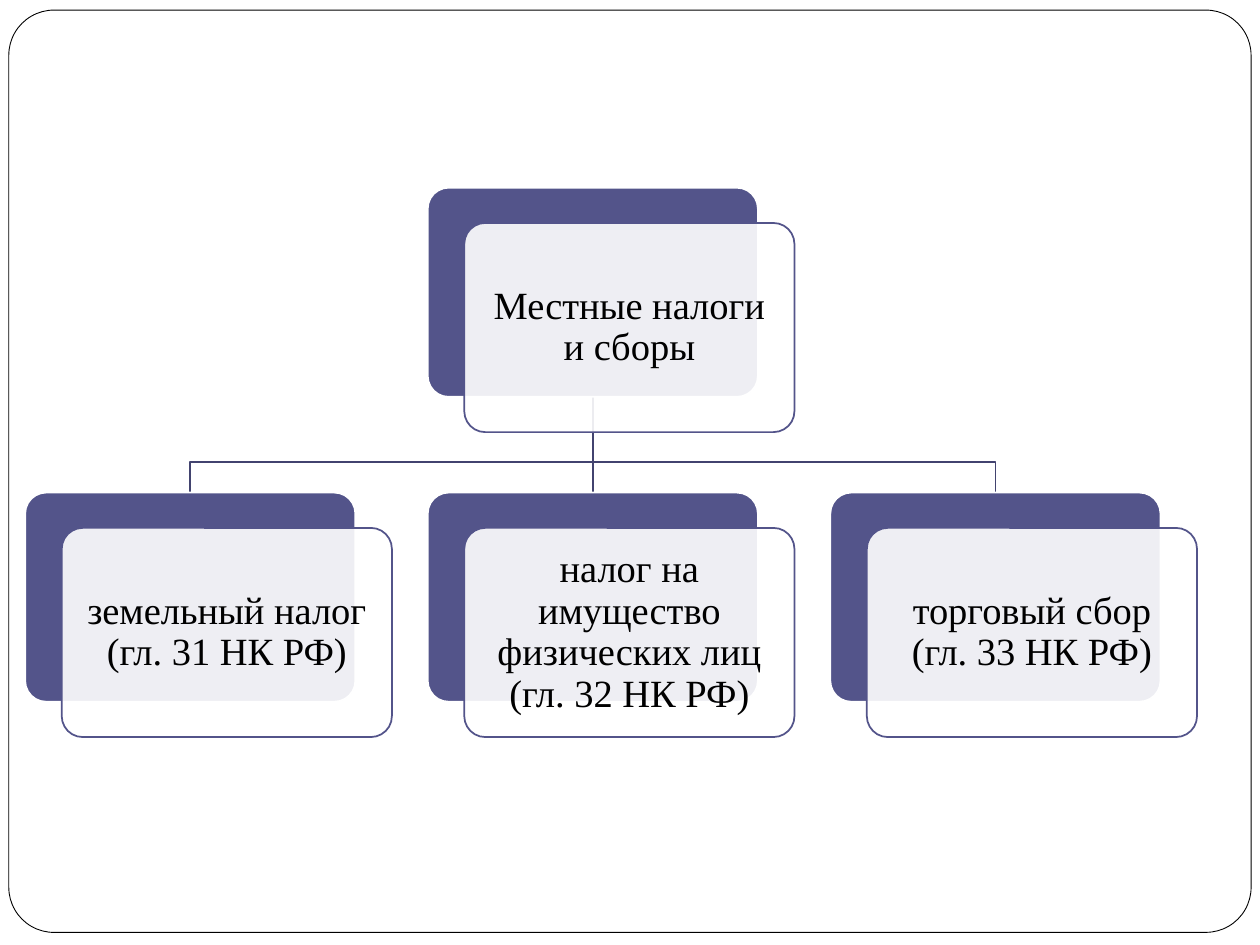
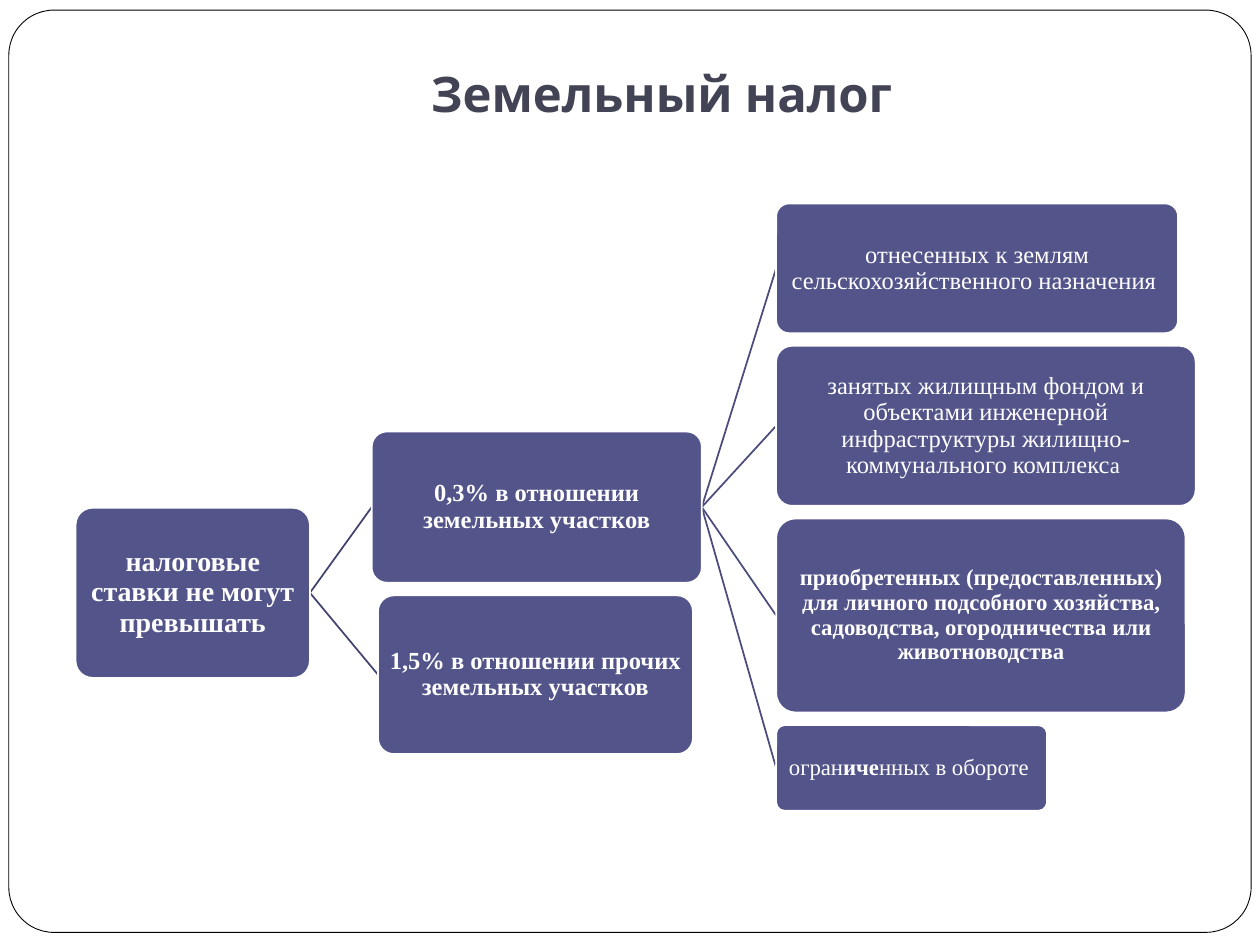
from dataclasses import dataclass

from lxml import etree
from pptx import Presentation
from pptx.dml.color import RGBColor
from pptx.enum import shapes, text
from pptx.oxml.ns import qn
from pptx.util import Inches, Pt

TITLE_ONLY, BLANK = 5, 6
TOP, LEFT, BOTTOM, RIGHT = range(4)


@dataclass(frozen=True)
class Theme:
    paper: str = "FFFFFF"
    ink: str = "000000"
    title: str = "424456"
    accent: str = "53548A"
    branch: str = "42436F"
    leaf_branch: str = "4B4C7D"
    title_font: str = "Karla"
    body_font: str = "Times New Roman"
    title_size: int = 28
    card_size: int = 22
    root_size: int = 16
    node_size: int = 14
    small_size: int = 13


class Deck:
    def __init__(self, theme):
        self.theme = theme
        self.prs = Presentation()
        self.prs.slide_width, self.prs.slide_height = Inches(10), Inches(7.5)
        self.slide = None

    def new_slide(self, layout):
        self.slide = self.prs.slides.add_slide(self.prs.slide_layouts[layout])

    def frame_master(self):
        """Move the rounded page frame from the current slide to the master."""
        frame = self.box(0.07, 0.08, 9.86, 7.32, self.theme.paper, self.theme.ink, 0.5, 0.049)
        self.prs.slide_master.shapes.element.insert(2, frame.element)

    def title(self, wording):
        holder = self.slide.shapes.title
        holder.left, holder.top = Inches(1), Inches(0.3)
        holder.width, holder.height = Inches(8.5), Inches(0.77)
        self.add_text(holder, [(wording, self.theme.title_size, True)], self.theme.title,
                      (0.1, 0.05, 0.1, 0.1), font=self.theme.title_font,
                      anchor=text.MSO_ANCHOR.BOTTOM, spacing=1)

    def add_text(self, shape, runs, color, margins, font=None,
                 anchor=text.MSO_ANCHOR.MIDDLE, spacing=0.9):
        """Fill a shape with one centred paragraph of (wording, size, bold) runs."""
        frame = shape.text_frame
        frame.word_wrap = True
        frame.auto_size = text.MSO_AUTO_SIZE.NONE
        frame.vertical_anchor = anchor
        (frame.margin_left, frame.margin_top,
         frame.margin_right, frame.margin_bottom) = map(Inches, margins)
        paragraph = frame.paragraphs[0]
        paragraph.alignment = text.PP_ALIGN.CENTER
        paragraph.line_spacing = spacing
        for wording, size, bold in runs:
            run = paragraph.add_run()
            run.text = wording
            run.font.name = font or self.theme.body_font
            run.font.size, run.font.bold = Pt(size), bold
            run.font.color.rgb = RGBColor.from_string(color)

    def box(self, left, top, width, height, fill, line, line_width=1, corner=0.1, opacity=100):
        box = self.slide.shapes.add_shape(
            shapes.MSO_SHAPE.ROUNDED_RECTANGLE,
            Inches(left), Inches(top), Inches(width), Inches(height))
        box.adjustments[0] = corner
        box.shadow.inherit = False
        box.fill.solid()
        box.fill.fore_color.rgb = RGBColor.from_string(fill)
        if opacity < 100:
            tint = box.element.spPr.find(qn("a:solidFill"))[0]
            etree.SubElement(tint, qn("a:alpha")).set("val", str(opacity * 1000))
        self.outline(box, line, line_width)
        return box

    def outline(self, shape, color, width=1):
        shape.line.color.rgb = RGBColor.from_string(color)
        shape.line.width = Pt(width)

    def send_to_back(self, shape):
        self.slide.shapes.element.insert(2, shape.element)

    def card(self, left, top, wording):
        """Place a dark plate with a translucent caption card; return the plate."""
        size = (2.62, 1.66)
        plate = self.box(left, top, *size, self.theme.accent, self.theme.paper)
        caption = self.box(left + 0.29, top + 0.28, *size,
                           self.theme.paper, self.theme.accent, opacity=90)
        self.add_text(caption, [(wording, self.theme.card_size, False)],
                      self.theme.ink, (0.09,) * 4)
        return plate

    def node(self, left, top, width, height, runs):
        node = self.box(left, top, width, height, self.theme.accent, self.theme.paper)
        self.add_text(node, runs, self.theme.paper, (0.01,) * 4)
        return node

    def link(self, start, start_side, end, end_side, color):
        link = self.slide.shapes.add_connector(shapes.MSO_CONNECTOR.STRAIGHT, 0, 0, 0, 0)
        link.begin_connect(start, start_side)
        link.end_connect(end, end_side)
        self.outline(link, color)
        etree.SubElement(link.element.spPr, qn("a:effectLst"))
        self.send_to_back(link)

    def elbow(self, parent, child):
        """Draw a stepped line from a parent's bottom to a child's top."""
        x0, y0 = parent.left + parent.width // 2, parent.top + parent.height
        x1, y1 = child.left + child.width // 2, child.top
        bend = y0 + Inches(0.52)
        builder = self.slide.shapes.build_freeform(x0, y0)
        builder.add_line_segments([(x0, bend), (x1, bend), (x1, y1)], close=False)
        step = builder.convert_to_shape()
        step.shadow.inherit = False
        step.fill.background()
        self.outline(step, self.theme.branch)
        self.send_to_back(step)

    def branches(self, parent, children, color, gap=0.1):
        """Stack (left, width, height, runs) nodes, centred on the parent's middle."""
        total = sum(height for _, _, height, _ in children) + gap * (len(children) - 1)
        top = (parent.top + parent.height / 2) / Inches(1) - total / 2
        nodes = []
        for left, width, height, runs in children:
            nodes.append(self.node(left, top, width, height, runs))
            self.link(parent, RIGHT, nodes[-1], LEFT, color)
            top += height + gap
        return nodes


def local_taxes(deck):
    deck.new_slide(BLANK)
    deck.frame_master()
    first, last = 0.2, 6.59
    step = (last - first) / 2
    root = deck.card(first + step, 1.49, "Местные налоги и сборы")
    taxes = ["земельный налог (гл. 31 НК РФ)",
             "налог на имущество физических лиц (гл. 32 НК РФ)",
             "торговый сбор (гл. 33 НК РФ)"]
    land, property_tax, trade = [
        deck.card(first + i * step, 3.91, tax) for i, tax in enumerate(taxes)]
    deck.elbow(root, land)
    deck.link(root, BOTTOM, property_tax, TOP, deck.theme.branch)
    deck.elbow(root, trade)


def land_tax(deck):
    theme = deck.theme
    node, small = theme.node_size, theme.small_size
    deck.new_slide(TITLE_ONLY)
    deck.title("Земельный налог")
    limit = deck.node(0.6, 4.03, 1.86, 1.35,
                      [("налоговые ставки не могут превышать", theme.root_size, True)])
    reduced, _ = deck.branches(limit, [
        (2.95, 2.62, 1.2, [("0,3% в отношении земельных участков", node, True)]),
        (3, 2.5, 1.26, [("1,5% в отношении прочих земельных участков", node, True)]),
    ], theme.branch)
    plots = [
        (3.19, 1.03, [("отнесенных к землям сельскохозяйственного назначения ", node, False)]),
        (3.33, 1.27, [("занятых жилищным фондом и объектами инженерной инфраструктуры "
                       "жилищно-коммунального комплекс", node, False),
                      ("а ", small, False)]),
        (3.25, 1.54, [("приобретенных (предоставленных) для личного подсобного хозяйства, "
                       "садоводства, огородничества или животноводства", small, True)]),
        (2.15, 0.68, [("огран", small, False), ("иче", small, True),
                      ("нных в обороте ", small, False)]),
    ]
    deck.branches(reduced, [(6.16, *plot) for plot in plots], theme.leaf_branch)


def main():
    deck = Deck(Theme())
    local_taxes(deck)
    land_tax(deck)
    deck.prs.save("out.pptx")


if __name__ == "__main__":
    main()
